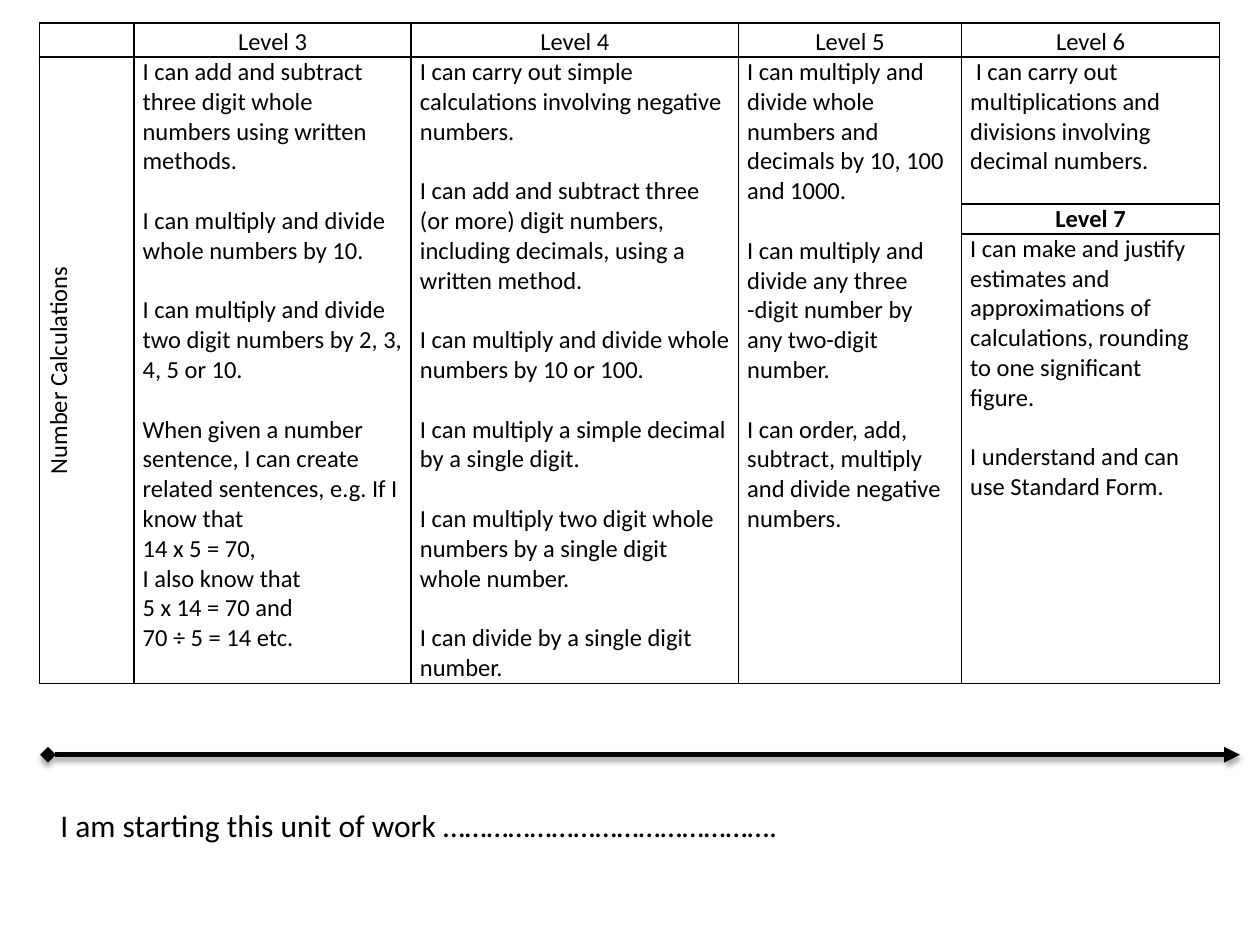
from lxml import etree
from pptx import Presentation
from pptx.dml.color import RGBColor
from pptx.enum import shapes, text
from pptx.oxml import ns
from pptx.util import Pt

BLACK = RGBColor(0, 0, 0)
WHITE = RGBColor(255, 255, 255)
FONT, SIZE, GAP = "Calibri", 14, 17

# Content: each statement is a list of its paragraphs
HEADS = ["", "Level 3", "Level 4", "Level 5", "Level 6"]
TOPIC = "Number Calculations"
LEVELS = [
    [["I can add and subtract three digit whole numbers using written methods."],
     ["I can multiply and divide whole numbers by 10."],
     ["I can multiply and divide two digit numbers by 2, 3, 4, 5 or 10."],
     ["When given a number sentence, I can create related sentences, e.g. If I know that",
      "14 x 5 = 70,", "I also know that", "5 x 14 = 70 and", "70 ÷ 5 = 14 etc."]],
    [["I can carry out simple calculations involving negative numbers."],
     ["I can add and subtract three (or more) digit numbers, including decimals, "
      "using a written method."],
     ["I can multiply and divide whole numbers by 10 or 100."],
     ["I can multiply a simple decimal by a single digit."],
     ["I can multiply two digit whole numbers by a single digit whole number."],
     ["I can divide by a single digit number."]],
    [["I can multiply and divide whole numbers and decimals by 10, 100 and 1000."],
     ["I can multiply and divide any three -digit number by any two-digit number."],
     ["I can order, add, subtract, multiply and divide negative numbers."]],
]
SIX = [["\u00a0I can carry out multiplications and divisions involving decimal numbers."
        .replace("\u00a0", " ")]]
SEVEN = [["I can make and justify estimates and approximations of calculations, "
          "rounding to one significant figure."],
         ["I understand and can use Standard Form."]]
START = "I am starting this unit of work ………………………………………."

COLS = [54, 158.5, 187, 127.5, 147.5]
ROWS = [18, 84, 17, 257]
LEFT, TOP = 22.5, 13


def style(par, size=SIZE, bold=False):
    font = par.font
    font.name, font.size, font.bold = FONT, Pt(size), bold
    font.color.rgb = BLACK


def write(cell, items, head=False, bold=False):
    frame, first = cell.text_frame, True
    for item in items:
        for i, line in enumerate(item):
            par = frame.paragraphs[0] if first else frame.add_paragraph()
            par.text = line
            style(par, bold=bold)
            if i == 0 and not first:
                par.space_before = Pt(GAP)
            if head or bold:
                par.alignment = text.PP_ALIGN.CENTER
            if head:
                par.line_spacing = 1.15
            first = False


def frame(cell):
    cell.margin_left = cell.margin_right = Pt(5)
    cell.margin_top = cell.margin_bottom = 0
    props = cell._tc.get_or_add_tcPr()
    for side in "LRTB":
        edge = etree.SubElement(props, ns.qn(f"a:ln{side}"), w=str(Pt(1)))
        fill = etree.SubElement(edge, ns.qn("a:solidFill"))
        etree.SubElement(fill, ns.qn("a:srgbClr"), val=str(BLACK))
    cell.fill.background()


deck = Presentation()
deck.slide_width, deck.slide_height = Pt(720), Pt(540)
slide = deck.slides.add_slide(deck.slide_layouts[6])

# Table grid
grid = slide.shapes.add_table(len(ROWS), len(COLS), Pt(LEFT), Pt(TOP),
                              Pt(sum(COLS)), Pt(sum(ROWS))).table
grid.first_row = grid.horz_banding = False
for col, width in zip(grid.columns, COLS):
    col.width = Pt(width)
for row, height in zip(grid.rows, ROWS):
    row.height = Pt(height)
for cell in grid.iter_cells():
    frame(cell)
    style(cell.text_frame.paragraphs[0])

# Table text
for col, name in enumerate(HEADS):
    write(grid.cell(0, col), [[name]], head=True)
for col in range(4):
    grid.cell(1, col).merge(grid.cell(3, col))
topic = grid.cell(1, 0)
write(topic, [[TOPIC]], head=True)
topic._tc.get_or_add_tcPr().set("vert", "vert270")
for col, items in enumerate(LEVELS, 1):
    write(grid.cell(1, col), items)
write(grid.cell(1, 4), SIX)
write(grid.cell(2, 4), [["Level 7"]], bold=True)
write(grid.cell(3, 4), SEVEN)

# Progress arrow with a soft shadow
arrow = slide.shapes.add_connector(shapes.MSO_CONNECTOR.STRAIGHT,
                                   Pt(27.4), Pt(431.3), Pt(708.5), Pt(431.3))
arrow.line.color.rgb = BLACK
arrow.line.width = Pt(3)
line = arrow.line._get_or_add_ln()
etree.SubElement(line, ns.qn("a:headEnd"), type="diamond")
etree.SubElement(line, ns.qn("a:tailEnd"), type="triangle")
glow = etree.SubElement(arrow._element.spPr, ns.qn("a:effectLst"))
shade = etree.SubElement(glow, ns.qn("a:outerShdw"), blurRad=str(Pt(3.1)),
                         dist=str(Pt(1.8)), dir="5400000", rotWithShape="0")
tint = etree.SubElement(shade, ns.qn("a:srgbClr"), val=str(BLACK))
etree.SubElement(tint, ns.qn("a:alpha"), val="35000")

# Starting point
box = slide.shapes.add_textbox(Pt(27.4), Pt(457.2), Pt(661.7), Pt(51))
box.fill.solid()
box.fill.fore_color.rgb = WHITE
box.text_frame.word_wrap = True
par = box.text_frame.paragraphs[0]
par.text = START
style(par, size=18)

deck.save("out.pptx")
